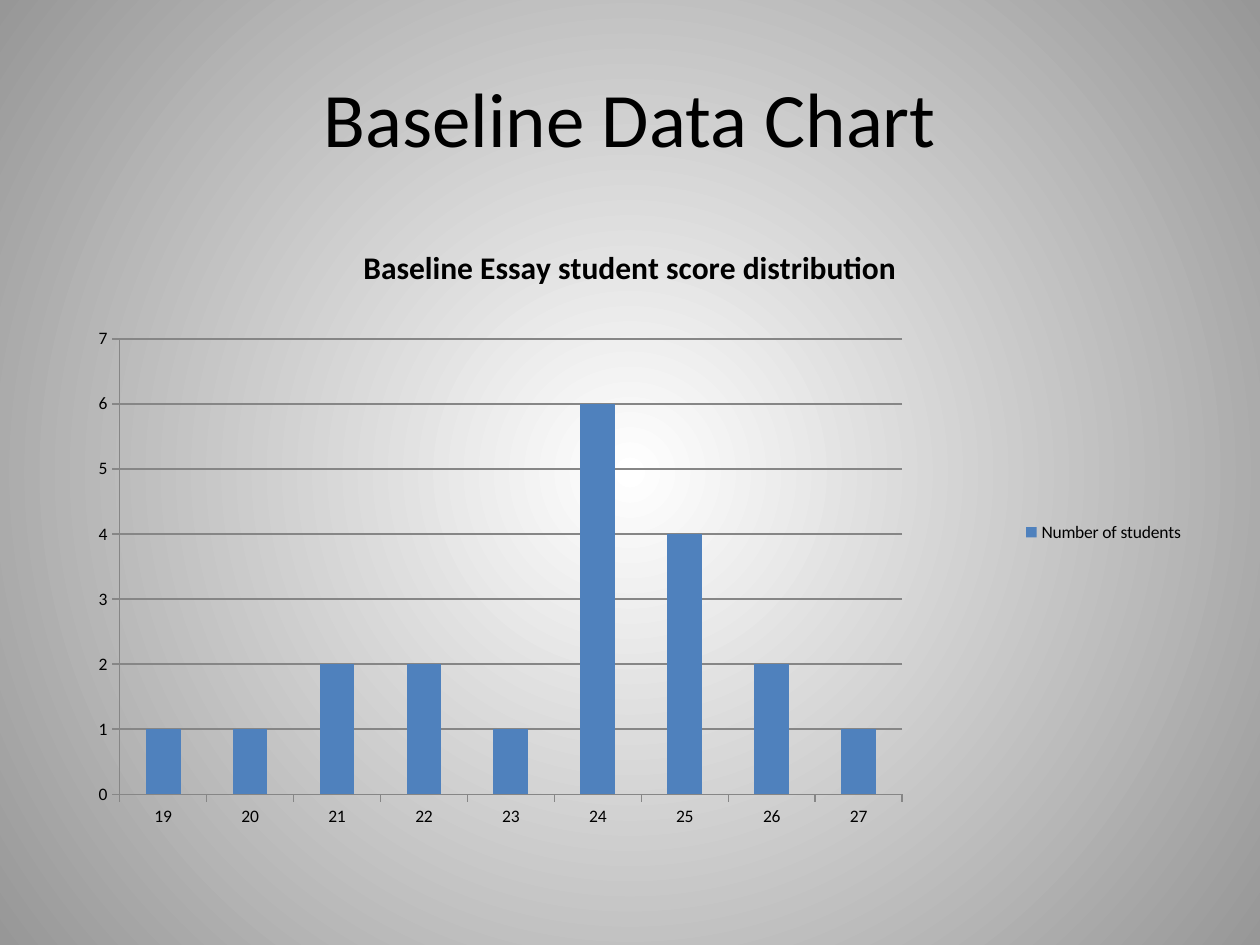
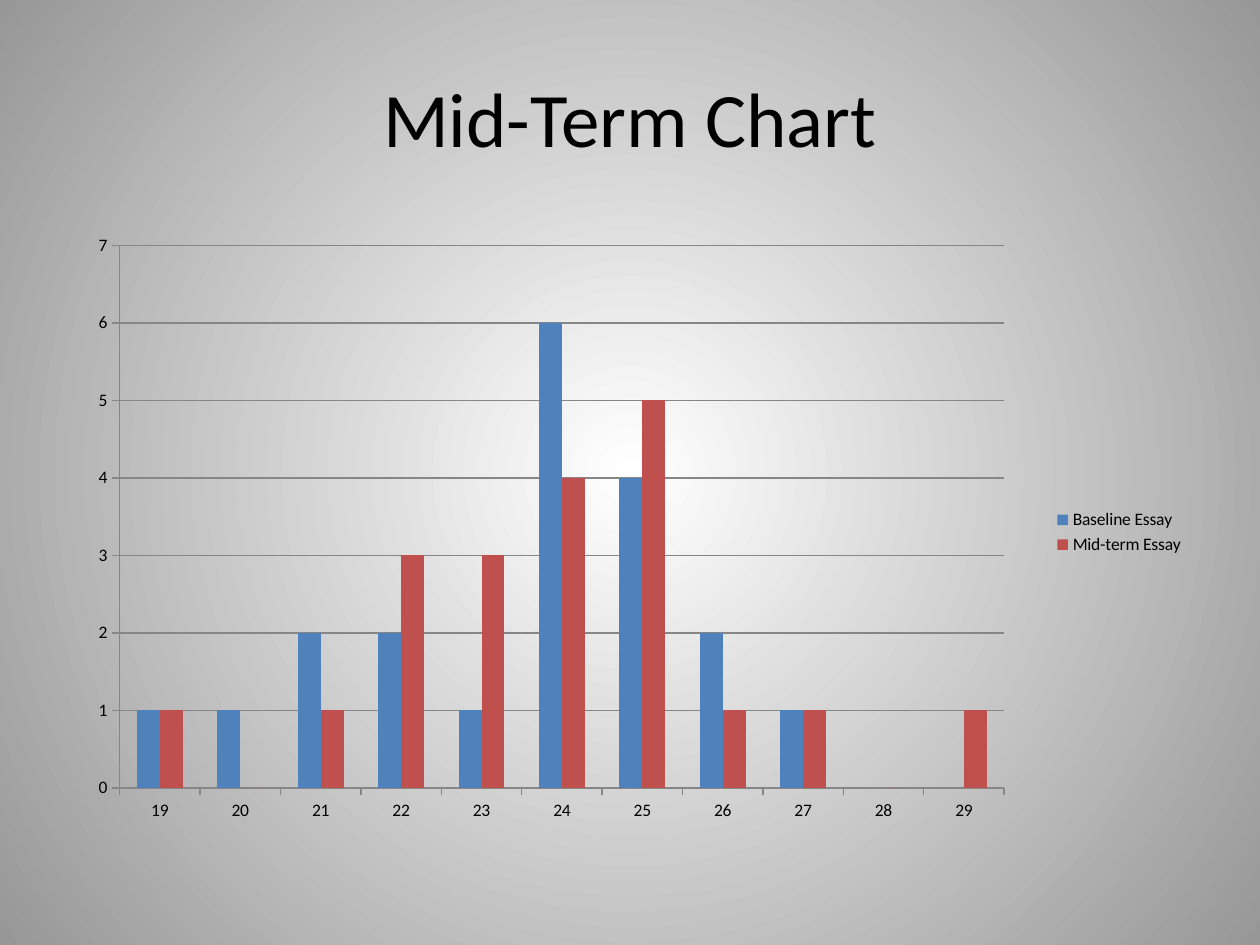
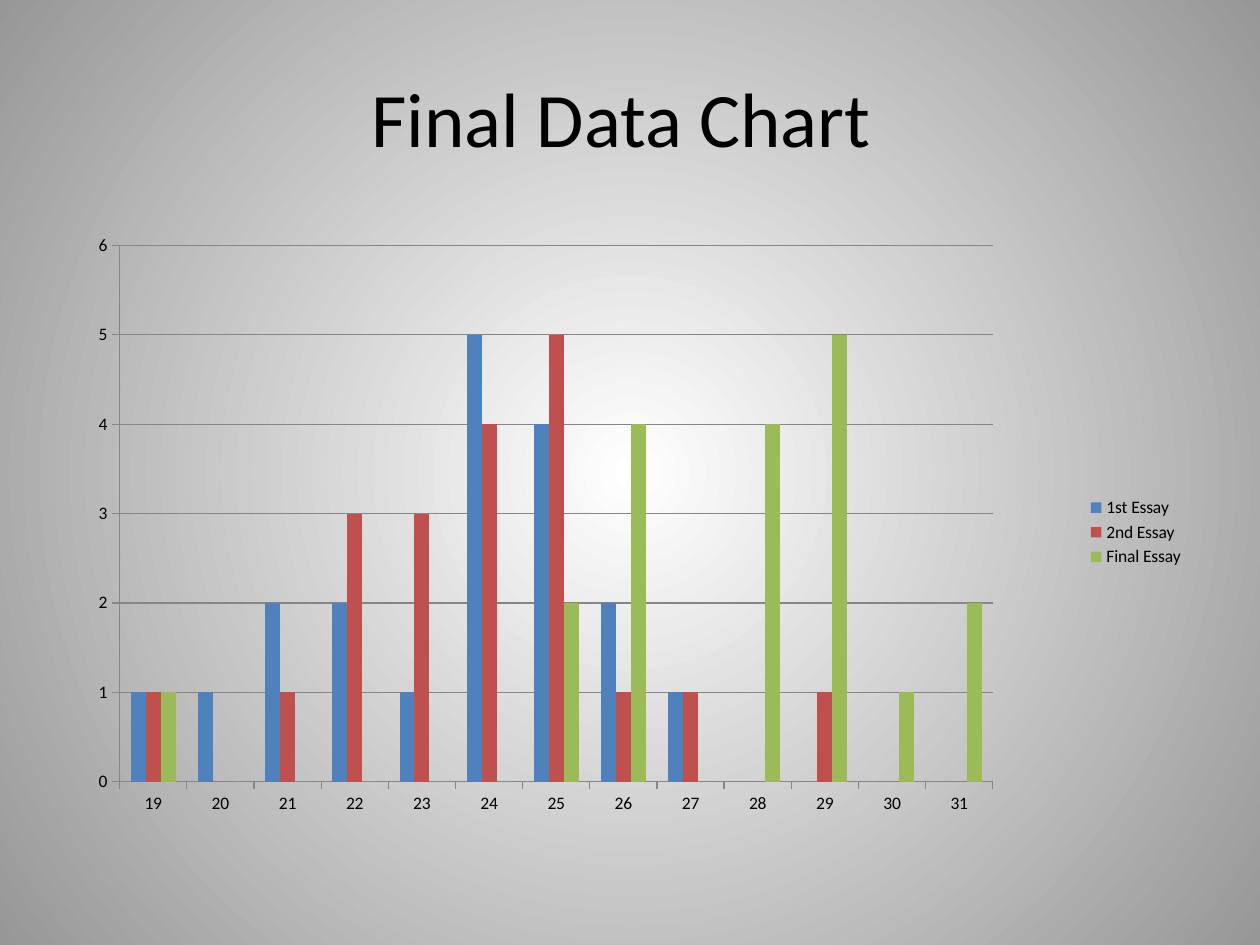
from lxml import etree
from pptx import Presentation
from pptx.chart.data import CategoryChartData
from pptx.dml.color import RGBColor
from pptx.enum.chart import XL_CHART_TYPE, XL_LEGEND_POSITION, XL_TICK_MARK
from pptx.enum.text import MSO_ANCHOR, PP_ALIGN
from pptx.oxml.ns import qn
from pptx.util import Pt

COLUMNS = XL_CHART_TYPE.COLUMN_CLUSTERED
LEGEND_RIGHT = XL_LEGEND_POSITION.RIGHT
TICK_OUTSIDE = XL_TICK_MARK.OUTSIDE
MIDDLE = MSO_ANCHOR.MIDDLE
CENTER = PP_ALIGN.CENTER

EMU_PER_PX = 9144
SLIDE_SIZE = (1000, 750)
TITLE_BOX = (50, 30, 900, 125)
CHART_BOX = (50, 175, 900, 495)
TITLE_ONLY = 5

FONT = "Calibri"
BLACK = RGBColor(0x00, 0x00, 0x00)
GRID_GRAY = RGBColor(0x86, 0x86, 0x86)
GLOW_CENTER = RGBColor(0xFF, 0xFF, 0xFF)
GLOW_EDGE = RGBColor(0x97, 0x97, 0x97)
SERIES_COLORS = (
    RGBColor(0x4F, 0x81, 0xBD),
    RGBColor(0xC0, 0x50, 0x4D),
    RGBColor(0x9B, 0xBB, 0x59),
)

FIRST_SCORE = 19
SCORE_SLIDES = (
    {
        "title": "Baseline Data Chart",
        "chart_title": "Baseline Essay student score distribution",
        "plot_area": (0.05, 0.19, 0.69, 0.73),
        "axis_maximum": 7,
        "series": {"Number of students": (1, 1, 2, 2, 1, 6, 4, 2, 1)},
    },
    {
        "title": "Mid-Term Chart",
        "chart_title": None,
        "plot_area": (0.05, 0.04, 0.78, 0.87),
        "axis_maximum": 7,
        "series": {
            "Baseline Essay": (1, 1, 2, 2, 1, 6, 4, 2, 1, 0, 0),
            "Mid-term Essay": (1, 0, 1, 3, 3, 4, 5, 1, 1, 0, 1),
        },
    },
    {
        "title": "Final Data Chart ",
        "chart_title": None,
        "plot_area": (0.05, 0.04, 0.77, 0.86),
        "axis_maximum": 6,
        "series": {
            "1st Essay": (1, 1, 2, 2, 1, 5, 4, 2, 1, 0, 0, 0, 0),
            "2nd Essay": (1, 0, 1, 3, 3, 4, 5, 1, 1, 0, 1, 0, 0),
            "Final Essay": (1, 0, 0, 0, 0, 0, 2, 4, 0, 4, 5, 1, 2),
        },
    },
)


def to_emu(lengths):
    """Turn px lengths into EMU."""
    return [length * EMU_PER_PX for length in lengths]


def style_font(font, size, bold=False):
    """Apply the shared typeface and colour at a size."""
    font.name = FONT
    font.size = Pt(size)
    font.bold = bold
    font.color.rgb = BLACK


def paint_background(master):
    """Give the master a round glow that every slide inherits."""
    fill = master.background.fill
    fill.gradient()
    for stop, color in zip(fill.gradient_stops, (GLOW_CENTER, GLOW_EDGE)):
        stop.color.rgb = color
    gradient = next(master.element.iter(qn("a:gradFill")))
    gradient.remove(gradient.find(qn("a:lin")))
    glow = etree.SubElement(gradient, qn("a:path"), path="circle")
    sides = dict.fromkeys("ltrb", "50000")
    etree.SubElement(glow, qn("a:fillToRect"), sides)


def place_title(slide, text, box):
    """Move the title placeholder into a box and fill it."""
    title = slide.shapes.title
    title.left, title.top, title.width, title.height = to_emu(box)
    title.text_frame.vertical_anchor = MIDDLE
    paragraph = title.text_frame.paragraphs[0]
    paragraph.alignment = CENTER
    run = paragraph.add_run()
    run.text = text
    style_font(run.font, 44)


def set_plot_area(chart, fractions):
    """Fix the inner plot area as fractions of the chart."""
    plot_area = next(chart.element.iter(qn("c:plotArea")))
    for automatic in plot_area.findall(qn("c:layout")):
        plot_area.remove(automatic)
    layout = etree.Element(qn("c:layout"))
    plot_area.insert(0, layout)
    manual = etree.SubElement(layout, qn("c:manualLayout"))
    settings = [("layoutTarget", "inner"), ("xMode", "edge"), ("yMode", "edge")]
    settings += zip("xywh", fractions)
    for name, value in settings:
        etree.SubElement(manual, qn(f"c:{name}"), val=str(value))


def style_axes(chart, maximum):
    """Format both axes and the horizontal gridlines."""
    value_axis = chart.value_axis
    value_axis.minimum_scale = 0
    value_axis.maximum_scale = maximum
    value_axis.major_unit = 1
    value_axis.has_major_gridlines = True
    chart.category_axis.has_major_gridlines = False
    for axis in (chart.category_axis, value_axis):
        axis.major_tick_mark = TICK_OUTSIDE
    for lined in (chart.category_axis, value_axis, value_axis.major_gridlines):
        lined.format.line.color.rgb = GRID_GRAY
        lined.format.line.width = Pt(0.75)


def title_chart(chart, text):
    """Show a bold chart heading, or none."""
    chart.has_title = text is not None
    if text:
        run = chart.chart_title.text_frame.paragraphs[0].add_run()
        run.text = text
        style_font(run.font, 18, bold=True)
        chart.chart_title.include_in_layout = False


def add_score_chart(slide, content, box):
    """Add the clustered columns of students per score in a box."""
    series_values = content["series"]
    score_count = len(next(iter(series_values.values())))
    data = CategoryChartData()
    data.categories = [str(FIRST_SCORE + step) for step in range(score_count)]
    for name, values in series_values.items():
        data.add_series(name, values)
    chart = slide.shapes.add_chart(COLUMNS, *to_emu(box), data).chart
    style_font(chart.font, 10)
    title_chart(chart, content["chart_title"])
    chart.has_legend = True
    chart.legend.position = LEGEND_RIGHT
    chart.legend.include_in_layout = False
    plot = chart.plots[0]
    plot.gap_width = 150
    plot.overlap = 0
    plot.vary_by_categories = False
    for series, color in zip(plot.series, SERIES_COLORS):
        series.format.fill.solid()
        series.format.fill.fore_color.rgb = color
    style_axes(chart, content["axis_maximum"])
    set_plot_area(chart, content["plot_area"])


def add_score_slide(presentation, content):
    """Add one titled slide with its score chart."""
    slide = presentation.slides.add_slide(presentation.slide_layouts[TITLE_ONLY])
    place_title(slide, content["title"], TITLE_BOX)
    add_score_chart(slide, content, CHART_BOX)


def main():
    """Build and save the presentation."""
    presentation = Presentation()
    presentation.slide_width, presentation.slide_height = to_emu(SLIDE_SIZE)
    paint_background(presentation.slide_master)
    for content in SCORE_SLIDES:
        add_score_slide(presentation, content)
    presentation.save("out.pptx")


if __name__ == "__main__":
    main()
